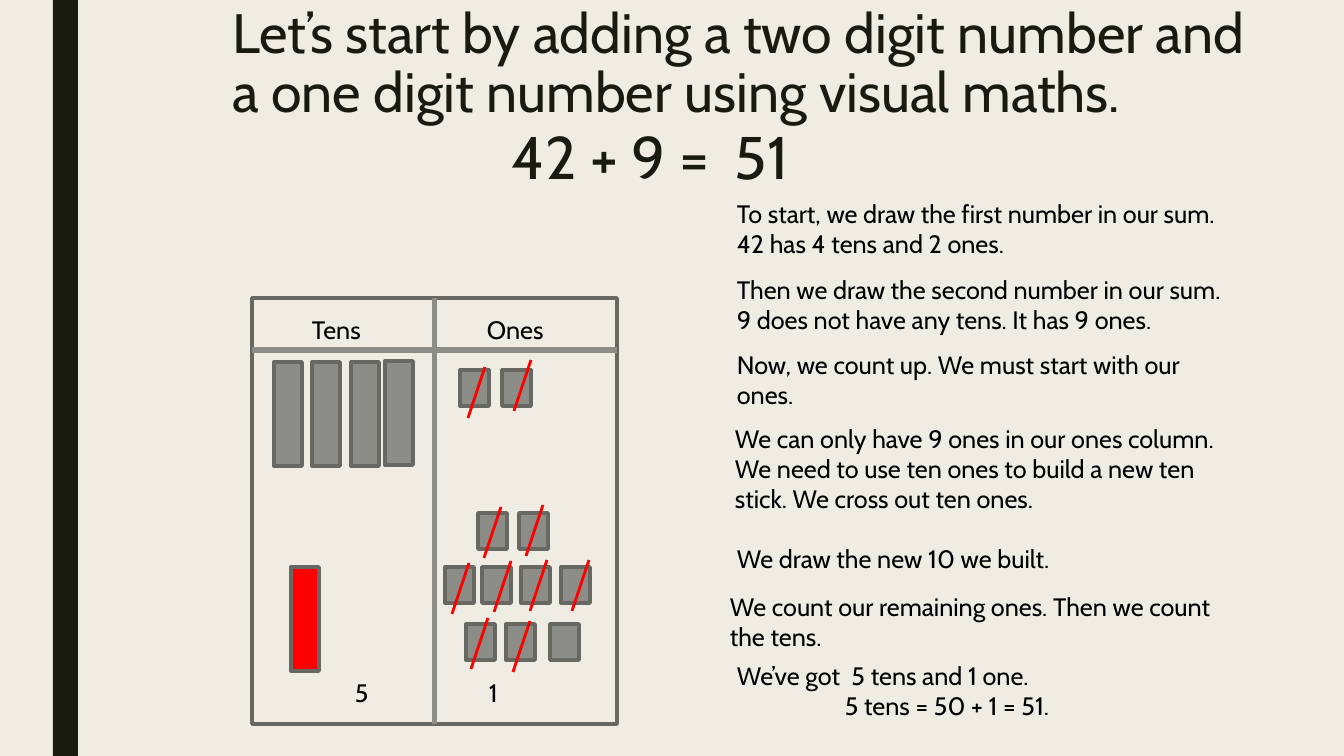
"""Build a slide that adds 42 and 9 with tens and ones blocks."""
from lxml.etree import SubElement
from pptx import Presentation
from pptx.dml.color import RGBColor
from pptx.enum.shapes import MSO_CONNECTOR, MSO_SHAPE
from pptx.enum.text import MSO_ANCHOR, MSO_AUTO_SIZE, PP_ALIGN
from pptx.oxml.ns import qn
from pptx.util import Pt

PX = 914400 / 100.8
WIDE, HIGH = 1344, 756
FONT = "Cabin"
HUES = {
    "page": "EFEDE3", "dark": "191B0E", "text": "000000",
    "block": "8C8D86", "edge": "686863", "red": "FF0000",
}

TITLE = "Let’s start by adding a two digit number and a one digit number using visual maths."
SUMS = [("42 + 9 =", 502), ("51", 725)]
STEPS = [
    (727, 193, 71, ["To start, we draw the first number in our sum.",
                    "42 has 4 tens and 2 ones."]),
    (727, 269, 71, ["Then we draw the second number in our sum.",
                    "9 does not have any tens. It has 9 ones."]),
    (727, 344, 71, ["Now, we count up. We must start with our ones."]),
    (725, 418, 102, ["We can only have 9 ones in our ones column. We need to use "
                     "ten ones to build a new ten stick. We cross out ten ones."]),
    (727, 538, 40, ["We draw the new 10 we built."]),
    (720, 586, 71, ["We count our remaining ones. Then we count the tens."]),
    (727, 655, 71, ["We’ve got  5 tens and 1 one.", "5 tens = 50 + 1 = 51."]),
]
LABELS = [("Tens", 302, 309, 157), ("Ones", 477, 309, 157),
          ("5", 345, 672, 88), ("1", 479, 672, 88)]
FRAME = (252, 298, 365, 426)
HEAD_Y = 350
TENS = [(274, 362), (312, 362), (351, 362), (385, 361)]
NEW_TEN = (291, 567)
ONES = {370: [460, 502], 513: [478, 519],
        567: [445, 482, 521, 561], 624: [466, 506, 550]}
CUTS = [(468, 418), (514, 411), (484, 558), (526, 556), (452, 614),
        (494, 612), (530, 611), (572, 611), (471, 669), (513, 672)]
TEN_SIZE, ONE_SIZE, CUT_SIZE = (28, 104), (29, 36), (17, 51)
INDENT = 108


def emu(*spans):
    return [round(n * PX) for n in spans]


def hue(name):
    return RGBColor.from_string(HUES[name])


def style(para, size, color, gap=None):
    para.font.name = FONT
    para.font.size = Pt(size)
    para.font.color.rgb = hue(color)
    para.alignment = PP_ALIGN.LEFT
    if gap:
        para.line_spacing = gap


def write(slide, box, lines, size=18, color="text", gap=None):
    frame = slide.shapes.add_textbox(*emu(*box)).text_frame
    frame.word_wrap = True
    frame.text = "\n".join(lines)
    for para in frame.paragraphs:
        style(para, size, color, gap)
    return frame


def block(slide, box, fill=None, edge="edge"):
    shape = slide.shapes.add_shape(MSO_SHAPE.RECTANGLE, *emu(*box))
    shape.shadow.inherit = False
    if fill:
        shape.fill.solid()
        shape.fill.fore_color.rgb = hue(fill)
    else:
        shape.fill.background()
    if edge:
        shape.line.color.rgb = hue(edge)
        shape.line.width = Pt(2.75)
    else:
        shape.line.fill.background()
    return shape


def rule(slide, ends, color, width):
    line = slide.shapes.add_connector(MSO_CONNECTOR.STRAIGHT, *emu(*ends))
    line.line.color.rgb = hue(color)
    line.line.width = Pt(width)
    SubElement(line._element.spPr, qn("a:effectLst"))
    return line


def add_title(slide):
    title = slide.shapes.title
    title.left, title.top, title.width, title.height = emu(222, 1, 1058, 163)
    frame = title.text_frame
    frame.text = TITLE
    frame.word_wrap = True
    frame.auto_size = MSO_AUTO_SIZE.NONE
    frame.vertical_anchor = MSO_ANCHOR.TOP
    style(frame.paragraphs[0], 39.6, "dark", 0.89)
    for text, x in SUMS:
        write(slide, (x, 129, WIDE - x, 67), [text], 42.9, "dark", 0.79)


def add_chart_frame(slide):
    x, y, wide, high = FRAME
    frame = block(slide, FRAME)
    mid = x + wide / 2
    split = rule(slide, (mid, y, mid, y + high), "block", 3.75)
    split.begin_connect(frame, 0)
    split.end_connect(frame, 2)
    rule(slide, (x, HEAD_Y, x + wide, HEAD_Y), "block", 3.75)
    for text, left, top, span in LABELS:
        write(slide, (left, top, span, 40), [text])


def add_blocks(slide):
    for spot in TENS:
        block(slide, spot + TEN_SIZE, "block")
    block(slide, NEW_TEN + TEN_SIZE, "red")
    for y, row in ONES.items():
        for x in row:
            block(slide, (x, y) + ONE_SIZE, "block")
    run, rise = CUT_SIZE
    for x, y in CUTS:
        rule(slide, (x, y, x + run, y - rise), "red", 2)


def add_steps(slide):
    for x, y, high, lines in STEPS:
        frame = write(slide, (x, y, 512, high), lines)
    last = frame.paragraphs[-1]._p.get_or_add_pPr()
    last.set("marL", str(emu(INDENT)[0]))


def main():
    deck = Presentation()
    deck.slide_width, deck.slide_height = emu(WIDE, HIGH)
    slide = deck.slides.add_slide(deck.slide_layouts[5])
    back = slide.background.fill
    back.solid()
    back.fore_color.rgb = hue("page")
    block(slide, (53, 0, 25, HIGH), "dark", None)
    add_title(slide)
    add_chart_frame(slide)
    add_blocks(slide)
    add_steps(slide)
    deck.save("out.pptx")


if __name__ == "__main__":
    main()
